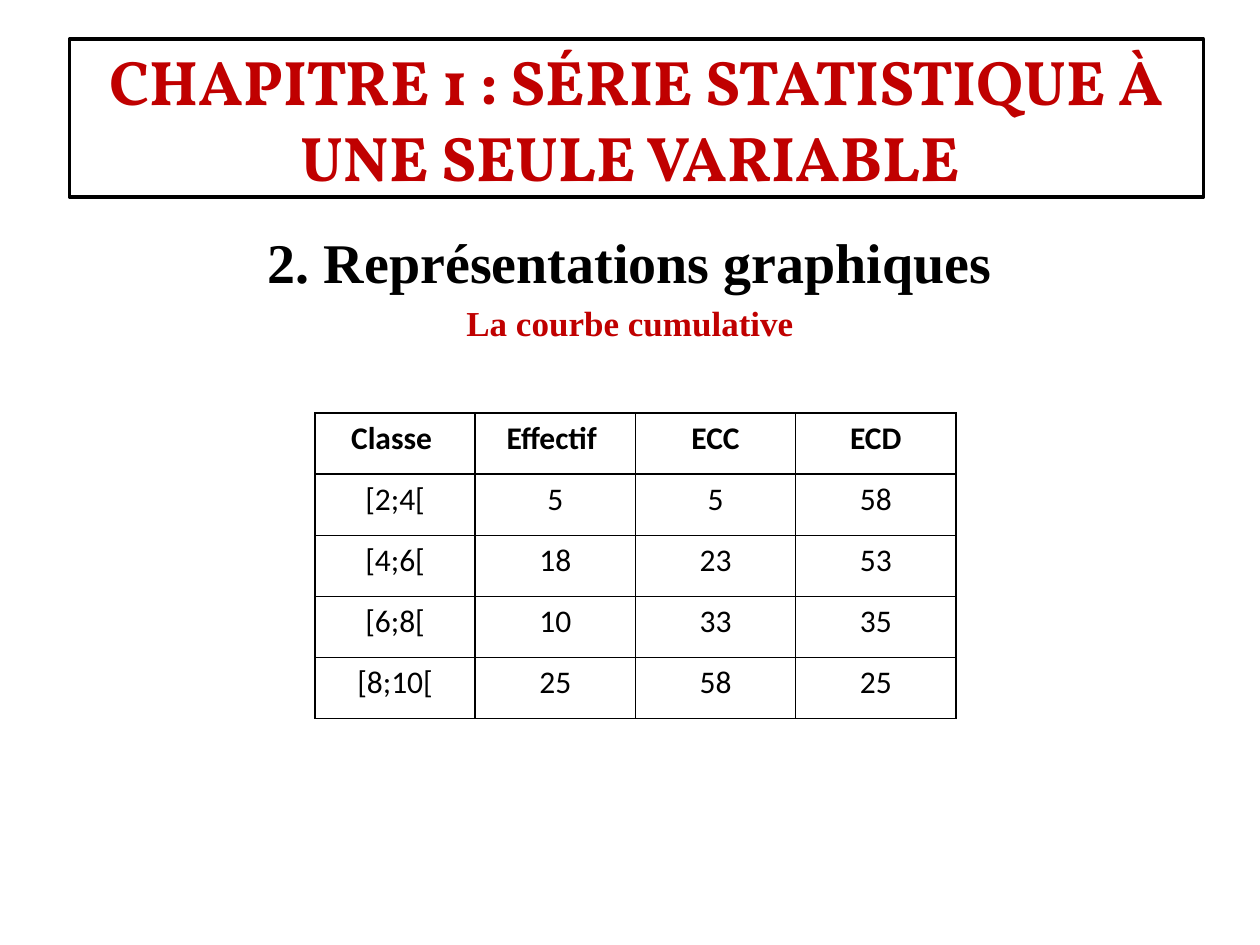
from lxml.etree import SubElement
from pptx import Presentation
from pptx.dml.color import RGBColor
from pptx.enum.text import MSO_ANCHOR, MSO_AUTO_SIZE, PP_ALIGN
from pptx.oxml.ns import qn
from pptx.util import Cm, Pt

COLORS = {"black": "000000", "white": "FFFFFF", "red": "C00000"}
TITLE = "CHAPITRE 1 : SÉRIE STATISTIQUE À UNE SEULE VARIABLE "
HEADINGS = [
    ("2. Représentations graphiques", 32, "black"),
    ("La courbe cumulative", 20, "red"),
]
ROWS = [
    ("Classe ", "Effectif ", "ECC", "ECD"),
    ("[2;4[", "5", "5", "58"),
    ("[4;6[", "18", "23", "53"),
    ("[6;8[", "10", "33", "35"),
    ("[8;10[", "25", "58", "25"),
]
ROW_H, COL_W = 1.23, 3.23


def rgb(name):
    return RGBColor.from_string(COLORS[name])


def write(p, text, size=18, font="Calibri", color="black", bold=False):
    p.alignment = PP_ALIGN.CENTER
    r = p.add_run()
    r.text = text
    r.font.size, r.font.name, r.font.bold = Pt(size), font, bold
    r.font.color.rgb = rgb(color)


def place(sp, left, top, width, height):
    sp.left, sp.top, sp.width, sp.height = map(Cm, (left, top, width, height))
    sp.text_frame.word_wrap = True
    sp.text_frame.auto_size = MSO_AUTO_SIZE.NONE


def add_borders(cell):
    tcPr = cell._tc.get_or_add_tcPr()
    for side in ("a:lnL", "a:lnR", "a:lnT", "a:lnB"):
        ln = SubElement(tcPr, qn(side), w=str(Pt(1)))
        fill = SubElement(ln, qn("a:solidFill"))
        SubElement(fill, qn("a:srgbClr"), val=COLORS["black"])


def add_title(s):
    sp = s.shapes.title
    place(sp, 1.4, 0.79, 22.86, 3.18)
    sp.fill.solid()
    sp.fill.fore_color.rgb = rgb("white")
    sp.line.color.rgb = rgb("black")
    sp.line.width = Pt(2)
    sp.text_frame.vertical_anchor = MSO_ANCHOR.MIDDLE
    write(sp.text_frame.paragraphs[0], TITLE, size=36, font="Vollkorn", color="red", bold=True)


def add_headings(s):
    sp = s.placeholders[1]
    place(sp, 1.27, 4.45, 22.86, 12.57)
    tf = sp.text_frame
    for i, (text, size, color) in enumerate(HEADINGS):
        p = tf.add_paragraph() if i else tf.paragraphs[0]
        write(p, text, size=size, font="Times New Roman", color=color, bold=True)
        pPr = p._p.get_or_add_pPr()
        pPr.set("marL", "0")
        pPr.set("indent", "0")
        SubElement(pPr, qn("a:buNone"))


def add_data(s):
    n, m = len(ROWS), len(ROWS[0])
    table = s.shapes.add_table(n, m, Cm(6.35), Cm(8.33), Cm(COL_W * m), Cm(ROW_H * n)).table
    table.horz_banding = False
    for col in table.columns:
        col.width = Cm(COL_W)
    for i, values in enumerate(ROWS):
        table.rows[i].height = Cm(ROW_H)
        for j, text in enumerate(values):
            cell = table.cell(i, j)
            write(cell.text_frame.paragraphs[0], text, bold=i == 0)
            add_borders(cell)
            cell.fill.background()


def main():
    """Build the slide on the cumulative curve."""
    prs = Presentation()
    prs.slide_width, prs.slide_height = Cm(25.4), Cm(19.05)
    s = prs.slides.add_slide(prs.slide_layouts[1])
    add_headings(s)
    add_title(s)
    add_data(s)
    prs.save("out.pptx")


if __name__ == "__main__":
    main()
